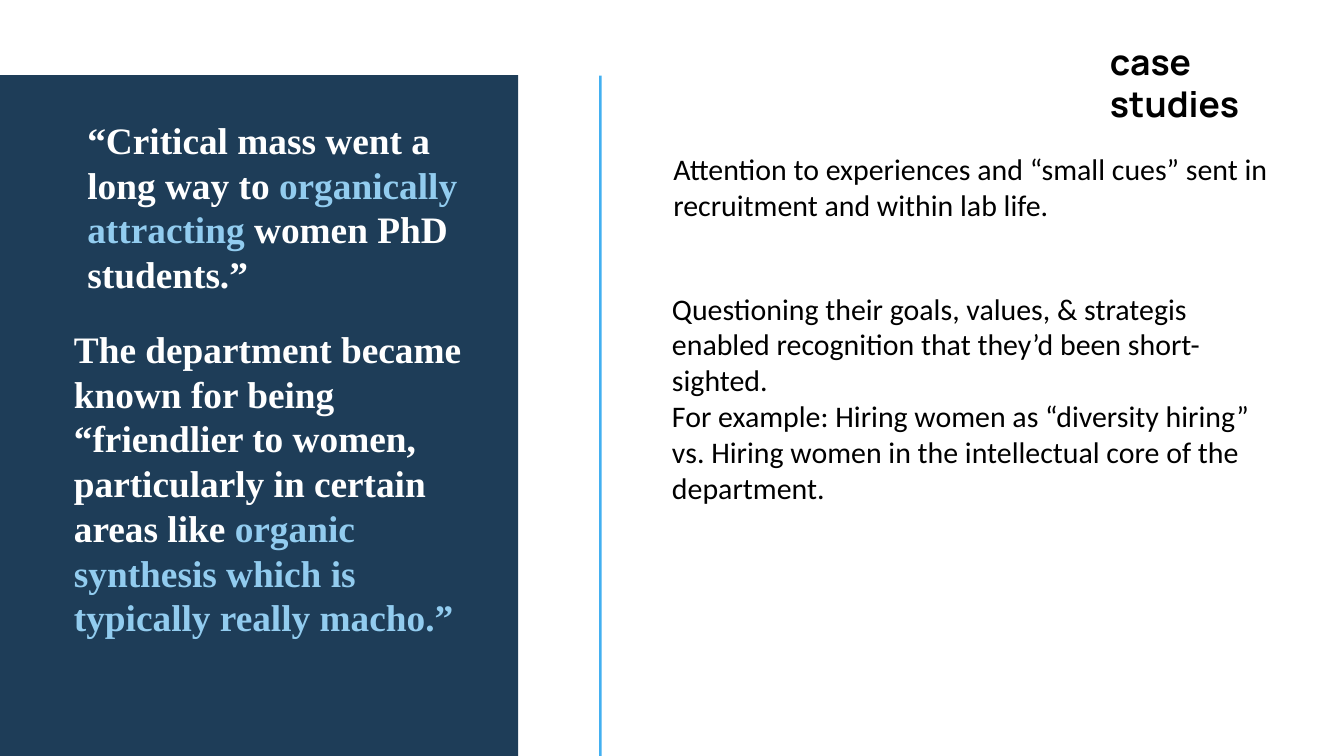
from dataclasses import dataclass

from pptx import Presentation, util as u
from pptx.dml.color import RGBColor
from pptx.enum import shapes, text
from pptx.slide import Slide

NAVY, BLUE, SKY = "1E3D58", "43B0F1", "92CCEF"
WHITE, BLACK = "FFFFFF", "000000"
LINE_FACTOR = 1.2


@dataclass(frozen=True)
class Box:
    left: float
    top: float
    width: float
    height: float

    def lengths(self) -> list[u.Length]:
        """Return the position and size as lengths."""
        return [u.Pt(value) for value in (self.left, self.top, self.width, self.height)]


@dataclass(frozen=True)
class Style:
    font: str
    size: float
    bold: bool = False


@dataclass(frozen=True)
class TextBlock:
    box: Box
    style: Style
    paragraphs: list[list[tuple[str, str]]]
    indent: float = 0
    margins: tuple[float, float] = (0, 0)
    grows: bool = True


QUOTE = Style("Times New Roman", 40, True)
BODY = Style("Calibri", 32)
TITLE = Style("Manrope", 38, True)

BARS = [
    (Box(-29.5, 80.6, 584.6, 759), NAVY),
    (Box(641.9, 81, 2.8, 772.6), BLUE),
]

TEXT_BLOCKS = [
    TextBlock(Box(79.2, 125.3, 430.6, 242.6), QUOTE, [[
        ("“Critical mass went a long way to ", WHITE),
        ("organically attracting ", SKY),
        ("women PhD students.”", WHITE),
    ]], indent=14.4),
    TextBlock(Box(721.4, 161.3, 637.9, 116.6), BODY, [[
        ("Attention to experiences and “small cues” sent in recruitment and within lab life.", BLACK),
    ]]),
    TextBlock(Box(720, 311, 637.9, 232.6), BODY, [
        [("Questioning their goals, values, & strategis enabled recognition that they’d been short-sighted.", BLACK)],
        [("For example: Hiring women as “diversity hiring” vs. Hiring women in the intellectual core of the department.", BLACK)],
    ]),
    TextBlock(Box(79.2, 349.2, 430.6, 339.1), QUOTE, [[
        ("The department became known for being “friendlier to women, particularly in certain areas like ", WHITE),
        ("organic synthesis which is typically really macho.”", SKY),
    ]]),
    TextBlock(Box(1182.2, 38.9, 219.6, 53.3), TITLE, [[("case studies", BLACK)]],
              margins=(7.2, 3.6), grows=False),
]


def color(value: str) -> RGBColor:
    """Turn a hex string into a colour."""
    return RGBColor.from_string(value)


def draw_bar(slide: Slide, box: Box, fill: str) -> None:
    """Draw a plain filled rectangle."""
    shape = slide.shapes.add_shape(shapes.MSO_SHAPE.RECTANGLE, *box.lengths())
    shape.shadow.inherit = False
    shape.fill.solid()
    shape.fill.fore_color.rgb = color(fill)
    shape.line.fill.background()


def draw_text(slide: Slide, block: TextBlock) -> None:
    """Draw a text box with coloured runs."""
    frame = slide.shapes.add_textbox(*block.box.lengths()).text_frame
    frame.word_wrap = True
    if block.grows:
        frame.auto_size = text.MSO_AUTO_SIZE.SHAPE_TO_FIT_TEXT
    horizontal, vertical = block.margins
    frame.margin_left = frame.margin_right = u.Pt(horizontal)
    frame.margin_top = frame.margin_bottom = u.Pt(vertical)
    for index, parts in enumerate(block.paragraphs):
        paragraph = frame.add_paragraph() if index else frame.paragraphs[0]
        paragraph.line_spacing = u.Pt(block.style.size * LINE_FACTOR)
        if block.indent:
            paragraph._p.get_or_add_pPr().set("marL", str(u.Pt(block.indent)))
        for wording, run_color in parts:
            run = paragraph.add_run()
            run.text = wording
            run.font.name = block.style.font
            run.font.size = u.Pt(block.style.size)
            run.font.bold = block.style.bold
            run.font.color.rgb = color(run_color)


def main() -> None:
    """Build and save the case studies slide."""
    presentation = Presentation()
    presentation.slide_width, presentation.slide_height = u.Pt(1440), u.Pt(810)
    slide = presentation.slides.add_slide(presentation.slide_layouts[6])
    for box, fill in BARS:
        draw_bar(slide, box, fill)
    for block in TEXT_BLOCKS:
        draw_text(slide, block)
    presentation.save("out.pptx")


if __name__ == "__main__":
    main()
